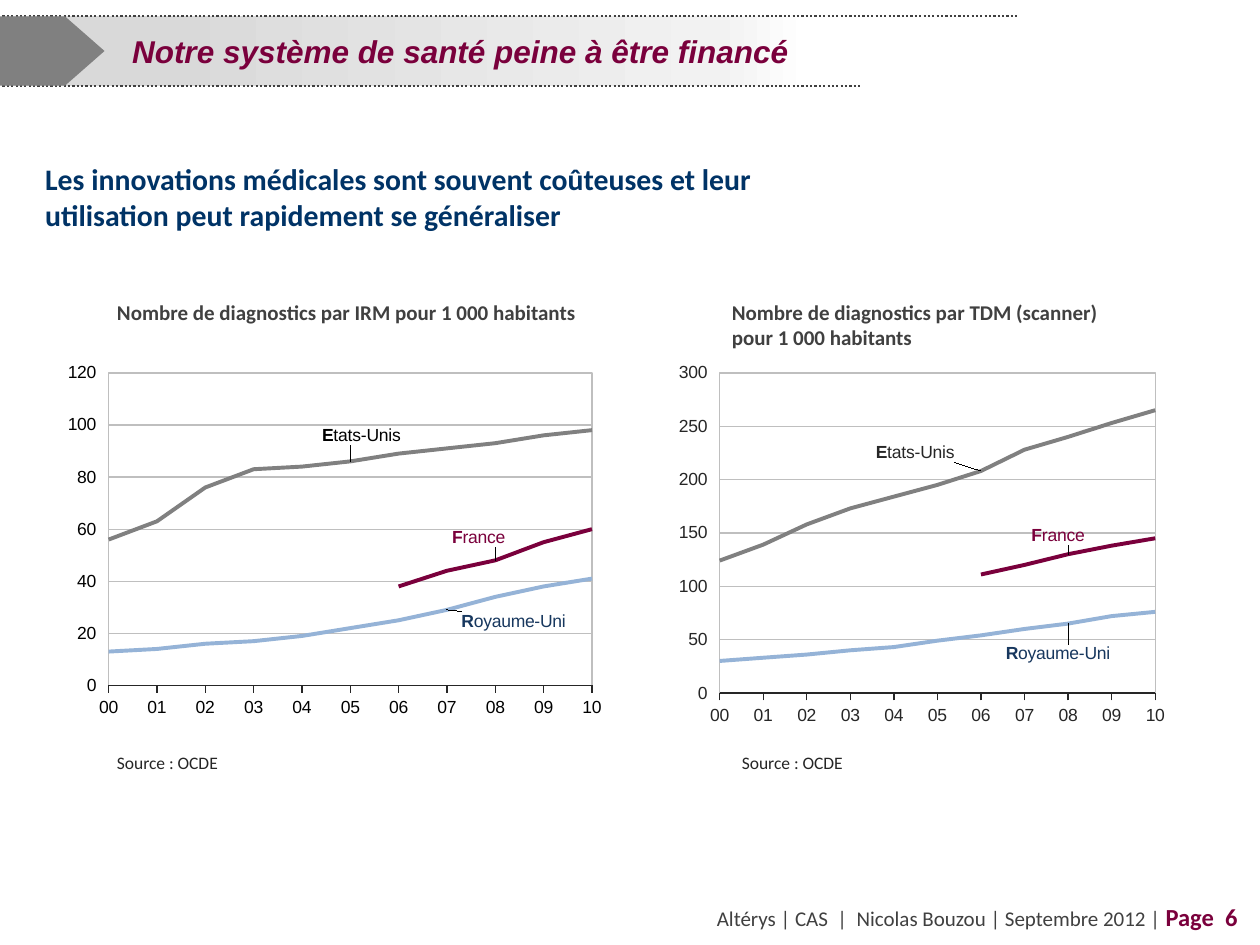
import copy

import pptx
import pptx.chart.data
import pptx.dml.color
import pptx.enum.chart
import pptx.enum.dml
import pptx.enum.shapes
import pptx.enum.text
import pptx.oxml
import pptx.oxml.ns
import pptx.util

RGB = pptx.dml.color.RGBColor
PLUM = RGB(0x7A, 0x00, 0x3C)
NAVY = RGB(0x00, 0x33, 0x66)
DEEP_BLUE = RGB(0x17, 0x37, 0x5E)
LIGHT_BLUE = RGB(0x95, 0xB3, 0xD7)
BLACK = RGB(0x00, 0x00, 0x00)
INK = RGB(0x26, 0x26, 0x26)
CHARCOAL = RGB(0x40, 0x40, 0x40)
GREY = RGB(0x80, 0x80, 0x80)
GRID_GREY = RGB(0xBF, 0xBF, 0xBF)
BANNER_STOPS = [(0.14, RGB(0xD9, 0xD9, 0xD9)), (0.62, RGB(0xF2, 0xF2, 0xF2)),
                (0.70, RGB(0xFF, 0xFF, 0xFF))]

COLUMNS, ROWS = 100, 75
CELL = pptx.util.Inches(0.1)
BANNER_TOP, BANNER_ROWS = 1.3, 5.5
CHART_TOP, CHART_ROWS = 28.1, 29.9
YEARS = [f"{year:02d}" for year in range(11)]
NO_DATA = [None] * 6


def cells(*counts):
    """Turn counts of grid cells into lengths."""
    return [round(count * CELL) for count in counts]


def format_font(font, size, color, name="Calibri", bold=False, italic=False):
    """Set every visible property of a font."""
    font.size, font.name = pptx.util.Pt(size), name
    font.bold, font.italic = bold, italic
    font.color.rgb = color


def add_span(para, text, **style):
    """Add one formatted run to a paragraph."""
    span = para.add_run()
    span.text = text
    format_font(span.font, **style)


def add_text(page, place, text, align=None, **style):
    """Add a wrapped text box with one paragraph per line and return it."""
    box = page.shapes.add_textbox(*cells(*place))
    box.text_frame.word_wrap = True
    for index, line in enumerate(text.split("\n")):
        frame = box.text_frame
        para = frame.add_paragraph() if index else frame.paragraphs[0]
        para.alignment = align
        add_span(para, line, **style)
    return box


def add_block(page, kind, place):
    """Add a preset shape without outline or shadow."""
    block = page.shapes.add_shape(kind, *cells(*place))
    block.shadow.inherit = False
    block.line.fill.background()
    return block


def fill_gradient(block, stops):
    """Fill a shape with a left-to-right gradient."""
    block.fill.gradient()
    block.fill.gradient_angle = 0
    stop_list = block._element.spPr.find(".//" + pptx.oxml.ns.qn("a:gsLst"))
    while len(stop_list) < len(stops):
        stop_list.append(copy.deepcopy(stop_list[-1]))
    for stop, (position, color) in zip(block.fill.gradient_stops, stops):
        stop.position = position
        stop.color.rgb = color


def add_dotted_rule(page, row, end):
    """Add a dotted horizontal rule from the left edge."""
    rule = page.shapes.add_connector(
        pptx.enum.shapes.MSO_CONNECTOR.STRAIGHT, *cells(0.2, row, end, row))
    rule.line.color.rgb = CHARCOAL
    rule.line.width = pptx.util.Pt(1.25)
    rule.line.dash_style = pptx.enum.dml.MSO_LINE.ROUND_DOT
    rule._element.spPr.append(pptx.oxml.parse_xml(
        f"<a:effectLst {pptx.oxml.ns.nsdecls('a')}/>"))


def add_banner(page, title):
    """Add the shaded title band with its rules and arrow."""
    band = add_block(page, pptx.enum.shapes.MSO_SHAPE.RECTANGLE,
                     (0.2, BANNER_TOP, 91.5, BANNER_ROWS))
    fill_gradient(band, BANNER_STOPS)
    band.text_frame.vertical_anchor = pptx.enum.text.MSO_ANCHOR.MIDDLE
    para = band.text_frame.paragraphs[0]
    para.alignment = pptx.enum.text.PP_ALIGN.LEFT
    margin, indent = cells(14.6, -5.3)
    para._p.get_or_add_pPr().set("marL", str(margin))
    para._p.get_or_add_pPr().set("indent", str(indent))
    add_span(para, title, size=18, color=PLUM, name="Arial", bold=True, italic=True)
    add_dotted_rule(page, BANNER_TOP, 80.9)
    add_dotted_rule(page, BANNER_TOP + BANNER_ROWS, 68.3)
    arrow = add_block(page, pptx.enum.shapes.MSO_SHAPE.PENTAGON,
                      (0, BANNER_TOP, 8.3, BANNER_ROWS))
    arrow.adjustments[0] = 0.57
    arrow.fill.solid()
    arrow.fill.fore_color.rgb = GREY


def manual_layout(values, inner=False):
    """Build a chart layout element from shares of the chart's size."""
    modes = ('<c:layoutTarget val="inner"/><c:xMode val="edge"/><c:yMode val="edge"/>'
             if inner else "")
    parts = "".join(f'<c:{tag} val="{value}"/>' for tag, value in zip("xywh", values))
    return pptx.oxml.parse_xml(
        f"<c:layout {pptx.oxml.ns.nsdecls('c')}><c:manualLayout>{modes}{parts}"
        "</c:manualLayout></c:layout>")


def label_point(series, index, name, color, offset):
    """Name a line at one of its points, with a leader line."""
    series.data_labels.show_value = False
    label = series.points[index].data_label
    para = label.text_frame.paragraphs[0]
    add_span(para, name[0], size=10, color=color, name="Arial", bold=True)
    add_span(para, name[1:], size=10, color=color, name="Arial")
    label.position = pptx.enum.chart.XL_LABEL_POSITION.ABOVE
    labels = series._element.find(pptx.oxml.ns.qn("c:dLbls"))
    labels.find(".//" + pptx.oxml.ns.qn("c:idx")).addnext(manual_layout(offset))
    labels.append(pptx.oxml.parse_xml(
        f"<c:extLst {pptx.oxml.ns.nsdecls('c')}>"
        '<c:ext uri="{CE6537A1-D6FC-4f65-9D91-7224C49458BB}" '
        'xmlns:c15="http://schemas.microsoft.com/office/drawing/2012/chart">'
        '<c15:showLeaderLines val="1"/></c:ext></c:extLst>'))


def format_axes(chart, top, step):
    """Set scales, ticks, grid lines and the frame of the plot."""
    years, values = chart.category_axis, chart.value_axis
    for axis in (years, values):
        axis.major_tick_mark = pptx.enum.chart.XL_TICK_MARK.OUTSIDE
        axis.minor_tick_mark = pptx.enum.chart.XL_TICK_MARK.NONE
        axis.format.line.width = pptx.util.Pt(0.75)
    years.format.line.color.rgb = INK
    values.format.line.fill.background()
    values.minimum_scale, values.maximum_scale, values.major_unit = 0, top, step
    values.tick_labels.number_format = "0"
    values.tick_labels.number_format_is_linked = False
    values.major_gridlines.format.line.color.rgb = GRID_GREY
    values.major_gridlines.format.line.width = pptx.util.Pt(0.75)
    values._element.find(pptx.oxml.ns.qn("c:crosses")).addnext(pptx.oxml.parse_xml(
        f"<c:crossBetween {pptx.oxml.ns.nsdecls('c')} val=\"midCat\"/>"))
    values._element.getparent().append(pptx.oxml.parse_xml(
        f"<c:spPr {pptx.oxml.ns.nsdecls('c', 'a')}><a:noFill/><a:ln w=\"9525\">"
        f'<a:solidFill><a:srgbClr val="{GRID_GREY}"/></a:solidFill></a:ln></c:spPr>'))


def add_line_chart(page, left, width, plot, top, step, color, lines):
    """Add a line chart whose lines are named by point labels."""
    data = pptx.chart.data.CategoryChartData(number_format="0")
    data.categories = YEARS
    for name, values, *_ in lines:
        data.add_series(name, values)
    chart = page.shapes.add_chart(
        pptx.enum.chart.XL_CHART_TYPE.LINE,
        *cells(left, CHART_TOP, width, CHART_ROWS), data).chart
    chart.has_legend = chart.has_title = False
    format_font(chart.font, size=10, color=color, name="Arial")
    format_axes(chart, top, step)
    plot_area = chart.value_axis._element.getparent()
    for old in plot_area.findall(pptx.oxml.ns.qn("c:layout")):
        plot_area.remove(old)
    plot_area.insert(0, manual_layout(plot, inner=True))
    for series, (name, _, line_color, *label) in zip(chart.plots[0].series, lines):
        series.smooth = False
        series.format.line.color.rgb = line_color
        series.format.line.width = pptx.util.Pt(2.25)
        series.marker.style = pptx.enum.chart.XL_MARKER_STYLE.NONE
        index, text_color, offset = label
        label_point(series, index, name, text_color, offset)


def main():
    """Build the slide and save it."""
    deck = pptx.Presentation()
    deck.slide_width, deck.slide_height = cells(COLUMNS, ROWS)
    page = deck.slides.add_slide(deck.slide_layouts[6])
    footer = add_text(page, (28, 71.1, 71.2, 3.9),
                      "Altérys | CAS  |  Nicolas Bouzou | Septembre 2012 | ",
                      align=pptx.enum.text.PP_ALIGN.RIGHT, size=12, color=CHARCOAL)
    add_span(footer.text_frame.paragraphs[0], "Page  6", size=14, color=PLUM, bold=True)
    add_banner(page, "Notre système de santé peine à être financé")
    add_text(page, (2.6, 12.3, 67.1, 5.5),
             "Les innovations médicales sont souvent coûteuses et leur "
             "utilisation peut rapidement se généraliser", size=17, color=NAVY, bold=True)
    add_line_chart(page, 5.1, 44.1, (0.08, 0.05, 0.87, 0.83), 120, 20, BLACK, [
        ("France", NO_DATA + [38, 44, 48, 55, 60], PLUM, 8, PLUM, (-0.03, -0.02)),
        ("Royaume-Uni", [13, 14, 16, 17, 19, 22, 25, 29, 34, 38, 41],
         LIGHT_BLUE, 7, DEEP_BLUE, (0.12, 0.07)),
        ("Etats-Unis", [56, 63, 76, 83, 84, 86, 89, 91, 93, 96, 98],
         GREY, 5, BLACK, (0.02, -0.03))])
    add_line_chart(page, 53.1, 40.2, (0.1, 0.05, 0.86, 0.85), 300, 50, INK, [
        ("France", NO_DATA + [111, 120, 130, 138, 145], PLUM, 8, PLUM, (-0.02, -0.01)),
        ("Etats-Unis", [124, 139, 158, 173, 184, 195, 208, 228, 240, 253, 265],
         GREY, 6, INK, (-0.13, -0.01)),
        ("Royaume-Uni", [30, 33, 36, 40, 43, 49, 54, 60, 65, 72, 76],
         LIGHT_BLUE, 8, DEEP_BLUE, (-0.02, 0.12))])
    for place, caption in [
            ((8.3, 23.3, 40.2, 3), "Nombre de diagnostics par IRM pour 1 000 habitants"),
            ((57.1, 23.3, 37.8, 5),
             "Nombre de diagnostics par TDM (scanner)\npour 1 000 habitants")]:
        add_text(page, place, caption, size=12, color=CHARCOAL, bold=True)
    for left in (8.3, 57.9):
        add_text(page, (left, 59.2, 15.7, 2.7), "Source : OCDE", size=10, color=INK)
    deck.save("out.pptx")


if __name__ == "__main__":
    main()
